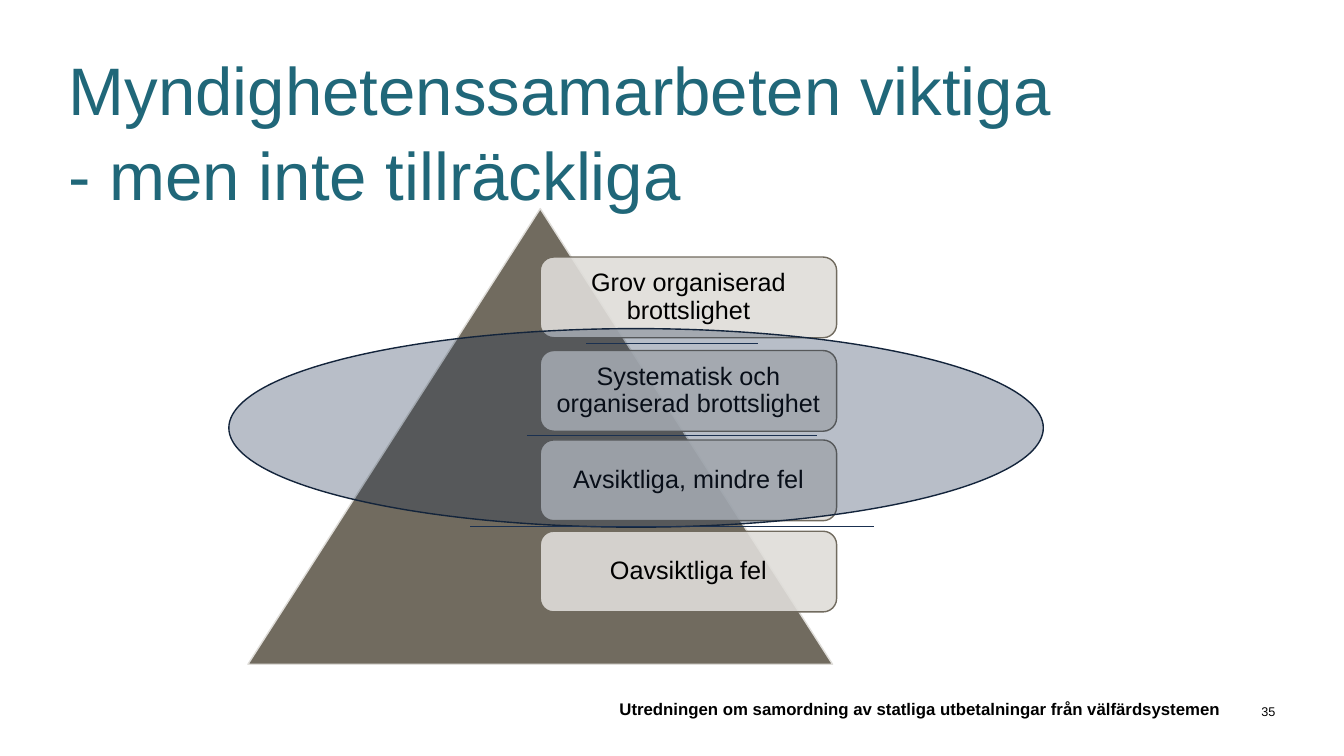
from dataclasses import dataclass

from lxml import etree
from pptx import Presentation
from pptx import util as u
from pptx.dml.color import RGBColor
from pptx.enum import shapes, text
from pptx.oxml.ns import qn
from pptx.shapes.autoshape import Shape
from pptx.slide import Slide

SLIDE_WIDTH = u.Inches(13.33)
SLIDE_HEIGHT = u.Inches(7.5)
GRID = 100  # columns across and rows down the slide

BROWN = RGBColor(0x71, 0x6B, 0x5F)
SAND = RGBColor(0xDF, 0xDD, 0xD9)
NAVY = RGBColor(0x1A, 0x30, 0x50)
DARK_NAVY = RGBColor(0x13, 0x24, 0x3B)
TEAL = RGBColor(0x20, 0x67, 0x79)
BLACK = RGBColor(0x00, 0x00, 0x00)

CENTRE_COLUMN = 50
FOOTER_ROW, FOOTER_HEIGHT = 91.87, 3.2


@dataclass(frozen=True)
class Area:
    column: float
    row: float
    columns: float
    rows: float

    def lengths(self) -> tuple[u.Length, u.Length, u.Length, u.Length]:
        return across(self.column), down(self.row), across(self.columns), down(self.rows)


@dataclass(frozen=True)
class Level:
    label: str
    row: float


@dataclass(frozen=True)
class Divider:
    row: float
    columns: float


LEVELS = (
    Level("Grov organiserad brottslighet", 34),
    Level("Systematisk och organiserad brottslighet", 46.37),
    Level("Avsiktliga, mindre fel", 58.2),
    Level("Oavsiktliga fel", 70.27),
)
DIVIDERS = (Divider(45.47, 12.75), Divider(57.6, 21.6), Divider(69.6, 30))


def across(columns: float) -> u.Length:
    return u.Emu(round(SLIDE_WIDTH * columns / GRID))


def down(rows: float) -> u.Length:
    return u.Emu(round(SLIDE_HEIGHT * rows / GRID))


def add_figure(slide: Slide, kind: shapes.MSO_SHAPE, area: Area, fill: RGBColor,
               line: RGBColor, opacity: int = 100) -> Shape:
    shape = slide.shapes.add_shape(kind, *area.lengths())
    shape.shadow.inherit = False
    shape.fill.solid()
    shape.fill.fore_color.rgb = fill
    if opacity < 100:
        color = shape.fill._xPr.find(qn("a:solidFill"))[0]
        etree.SubElement(color, qn("a:alpha"), val=str(opacity * 1000))
    shape.line.color.rgb = line
    shape.line.width = u.Pt(1)
    return shape


def write(shape: Shape, content: str, *, size: float, color: RGBColor = BLACK,
          bold: bool = False, align: text.PP_ALIGN = text.PP_ALIGN.LEFT,
          anchor: text.MSO_ANCHOR = text.MSO_ANCHOR.TOP, spacing: float = 1.0,
          inset_x: float = 0, inset_y: float = 0) -> None:
    frame = shape.text_frame
    frame.word_wrap = True
    frame.vertical_anchor = anchor
    frame.margin_left = frame.margin_right = u.Inches(inset_x)
    frame.margin_top = frame.margin_bottom = u.Inches(inset_y)
    paragraph = frame.paragraphs[0]
    paragraph.text = content
    paragraph.alignment = align
    paragraph.line_spacing = spacing
    for run in paragraph.runs:
        run.font.name = "Arial"
        run.font.size = u.Pt(size)
        run.font.bold = bold
        run.font.color.rgb = color


def add_level(slide: Slide, level: Level) -> None:
    area = Area(40.2, level.row, 22.05, 10.67)
    box = add_figure(slide, shapes.MSO_SHAPE.ROUNDED_RECTANGLE, area, SAND, BROWN, opacity=90)
    write(box, level.label, size=18, align=text.PP_ALIGN.CENTER,
          anchor=text.MSO_ANCHOR.MIDDLE, spacing=0.9, inset_x=0.07, inset_y=0.07)


def add_divider(slide: Slide, divider: Divider) -> None:
    half = divider.columns / 2
    row = down(divider.row)
    connector = slide.shapes.add_connector(
        shapes.MSO_CONNECTOR.STRAIGHT,
        across(CENTRE_COLUMN - half), row, across(CENTRE_COLUMN + half), row)
    connector.line.color.rgb = NAVY
    connector.line.width = u.Pt(0.5)
    etree.SubElement(connector._element.spPr, qn("a:effectLst"))


def add_footer(slide: Slide, content: str, column: float, columns: float,
               size: float, bold: bool = False) -> None:
    area = Area(column, FOOTER_ROW, columns, FOOTER_HEIGHT)
    write(slide.shapes.add_textbox(*area.lengths()), content, size=size, bold=bold,
          align=text.PP_ALIGN.RIGHT, anchor=text.MSO_ANCHOR.BOTTOM)


def main() -> None:
    presentation = Presentation()
    presentation.slide_width = SLIDE_WIDTH
    presentation.slide_height = SLIDE_HEIGHT
    slide = presentation.slides.add_slide(presentation.slide_layouts[6])

    add_figure(slide, shapes.MSO_SHAPE.ISOSCELES_TRIANGLE,
               Area(18.45, 27.6, 43.5, 60.27), BROWN, SAND)
    for level in LEVELS:
        add_level(slide, level)
    add_figure(slide, shapes.MSO_SHAPE.OVAL,
               Area(17.03, 43.47, 60.6, 26.27), NAVY, DARK_NAVY, opacity=31)

    title = slide.shapes.add_textbox(*Area(5.1, 5.2, 89.8, 15.07).lengths())
    write(title, "Myndighetenssamarbeten viktiga\v- men inte tillräckliga",
          size=48, color=TEAL, spacing=1.05, inset_y=0.05)
    add_footer(slide, "Utredningen om samordning av statliga utbetalningar från välfärdsystemen",
               17.03, 73.8, size=12, bold=True)
    add_footer(slide, "35", 90.92, 3.98, size=9)

    for divider in DIVIDERS:
        add_divider(slide, divider)
    presentation.save("out.pptx")


if __name__ == "__main__":
    main()
